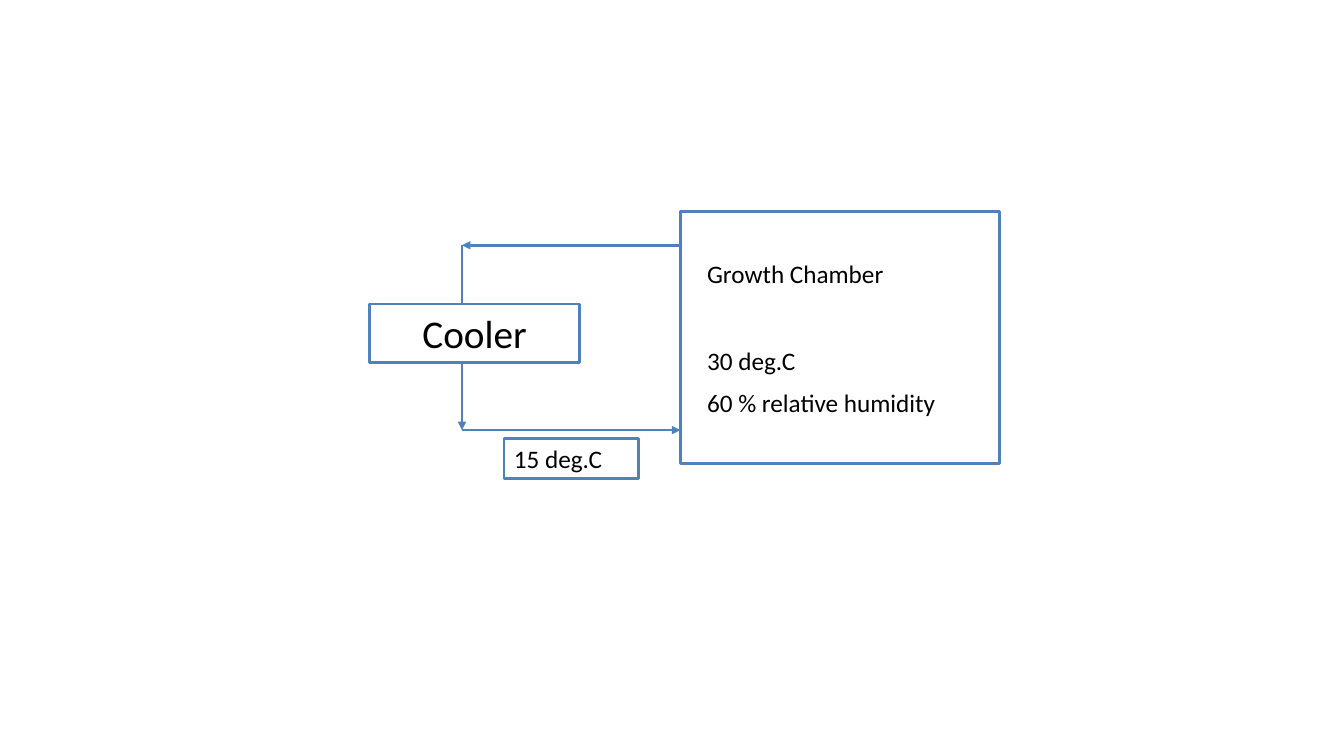
"""Draw the cooling loop between a cooler and a growth chamber."""
from dataclasses import dataclass

import lxml.etree
import pptx
import pptx.dml.color
import pptx.enum.shapes
import pptx.enum.text
import pptx.oxml.ns
import pptx.shapes.autoshape
import pptx.shapes.connector
import pptx.slide
import pptx.util

COLUMNS, ROWS = 160, 90
LOOP_LEFT, LOOP_TOP, LOOP_BOTTOM = 55, 29.2, 51.2
CHAMBER_LEFT = 81


@dataclass(frozen=True)
class Theme:
    """Hold the colours, font and sizes of the slide."""

    paper: pptx.dml.color.RGBColor = pptx.dml.color.RGBColor(255, 255, 255)
    ink: pptx.dml.color.RGBColor = pptx.dml.color.RGBColor(0, 0, 0)
    accent: pptx.dml.color.RGBColor = pptx.dml.color.RGBColor(0x4F, 0x81, 0xBD)
    font: str = "Calibri"
    body: int = 18
    heading: int = 28
    line: int = 2
    gap: int = 9
    section_gap: int = 40


THEME = Theme()


@dataclass(frozen=True)
class Label:
    """Describe one line of text and the space above it in points."""

    text: str
    space_before: int = 0


@dataclass(frozen=True)
class Box:
    """Describe a rectangle in grid columns and rows."""

    left: float
    top: float
    width: float
    height: float
    labels: tuple[Label, ...] = ()
    size: int = THEME.body
    centred: bool = False
    outlined: bool = True


@dataclass(frozen=True)
class Arrow:
    """Describe an arrow between two grid points."""

    start: tuple[float, float]
    end: tuple[float, float]


CHAMBER_LABELS = (
    Label("Growth Chamber"),
    Label("30 deg.C", THEME.section_gap),
    Label("60 % relative humidity", THEME.gap),
)

ELEMENTS: tuple[Box | Arrow, ...] = (
    Box(CHAMBER_LEFT, 25.2, 38, 30),
    Box(83, 30.2, 32, 21.2, CHAMBER_LABELS, outlined=False),
    Arrow((LOOP_LEFT, LOOP_TOP), (LOOP_LEFT, LOOP_BOTTOM)),
    Box(44, 36.2, 25, 7, (Label("Cooler"),), THEME.heading, centred=True),
    Arrow((LOOP_LEFT, LOOP_BOTTOM), (CHAMBER_LEFT, LOOP_BOTTOM)),
    Arrow((CHAMBER_LEFT, LOOP_TOP), (LOOP_LEFT, LOOP_TOP)),
    Box(60, 52.2, 16, 4.8, (Label("15 deg.C"),)),
)


def grid(cells: float) -> pptx.util.Length:
    """Convert grid cells of a twelfth of an inch to a length."""
    return pptx.util.Inches(cells / 12)


def apply(target: object, values: dict[str, object]) -> None:
    """Set each named attribute on the target."""
    for name, value in values.items():
        setattr(target, name, value)


def style_line(shape: pptx.shapes.autoshape.Shape | pptx.shapes.connector.Connector) -> None:
    """Give a shape or connector the accent line."""
    shape.line.color.rgb = THEME.accent
    shape.line.width = pptx.util.Pt(THEME.line)


def draw_box(slide: pptx.slide.Slide, box: Box) -> None:
    """Draw a rectangle with its labels."""
    shape = slide.shapes.add_shape(
        pptx.enum.shapes.MSO_SHAPE.RECTANGLE,
        *map(grid, (box.left, box.top, box.width, box.height)),
    )
    shape.shadow.inherit = False
    shape.fill.solid()
    shape.fill.fore_color.rgb = THEME.paper
    if box.outlined:
        style_line(shape)
    else:
        shape.line.fill.background()
    apply(shape.text_frame, {
        "word_wrap": True,
        "vertical_anchor": pptx.enum.text.MSO_ANCHOR.TOP,
    })
    alignment = pptx.enum.text.PP_ALIGN
    for index, label in enumerate(box.labels):
        frame = shape.text_frame
        paragraph = frame.add_paragraph() if index else frame.paragraphs[0]
        apply(paragraph, {
            "text": label.text,
            "alignment": alignment.CENTER if box.centred else alignment.LEFT,
            "space_before": pptx.util.Pt(label.space_before),
        })
        apply(paragraph.font, {"name": THEME.font, "size": pptx.util.Pt(box.size)})
        paragraph.font.color.rgb = THEME.ink


def draw_arrow(slide: pptx.slide.Slide, arrow: Arrow) -> None:
    """Draw a straight connector with a triangular head."""
    connector = slide.shapes.add_connector(
        pptx.enum.shapes.MSO_CONNECTOR.STRAIGHT,
        *map(grid, arrow.start + arrow.end),
    )
    style_line(connector)
    qualified = pptx.oxml.ns.qn
    properties = connector.element.spPr
    line = properties.find(qualified("a:ln"))
    lxml.etree.SubElement(line, qualified("a:tailEnd"), type="triangle")
    lxml.etree.SubElement(properties, qualified("a:effectLst"))


def main() -> None:
    """Build and save the slide."""
    presentation = pptx.Presentation()
    apply(presentation, {"slide_width": grid(COLUMNS), "slide_height": grid(ROWS)})
    slide = presentation.slides.add_slide(presentation.slide_layouts[6])
    for element in ELEMENTS:
        if isinstance(element, Box):
            draw_box(slide, element)
        else:
            draw_arrow(slide, element)
    presentation.save("out.pptx")


if __name__ == "__main__":
    main()
